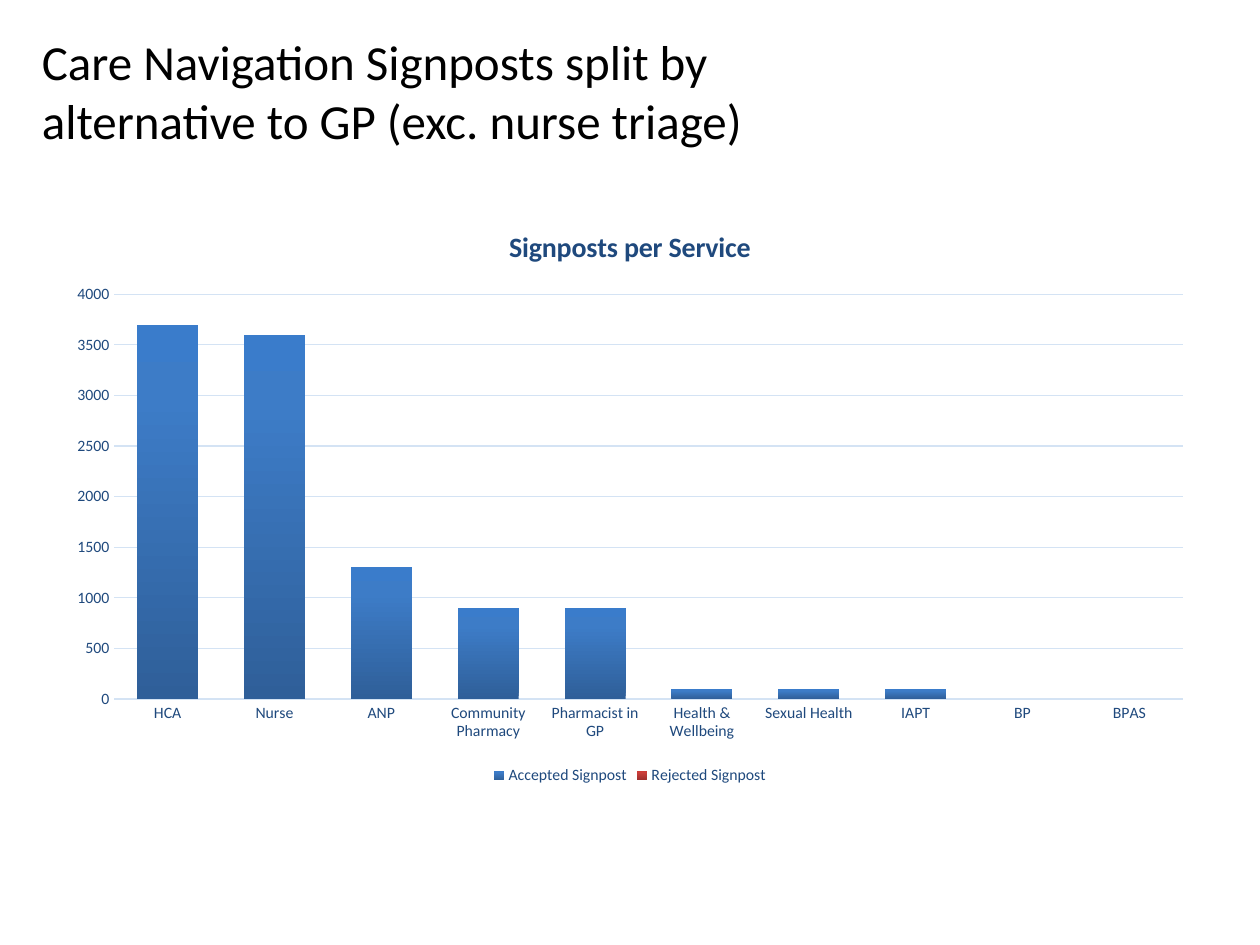
import lxml.etree
import pptx
import pptx.chart.data
import pptx.dml.color
import pptx.enum.chart
import pptx.enum.text
import pptx.oxml.ns
import pptx.util

Pt = pptx.util.Pt
RGBColor = pptx.dml.color.RGBColor
qn = pptx.oxml.ns.qn

BLACK = RGBColor(0x00, 0x00, 0x00)
NAVY = RGBColor(0x1F, 0x49, 0x7D)
PALE_BLUE = RGBColor(0xD4, 0xE3, 0xF4)
BLUES = [RGBColor(0x2F, 0x5F, 0x99), RGBColor(0x3D, 0x7C, 0xC7), RGBColor(0x3A, 0x7C, 0xCB)]
REDS = [RGBColor(0x9C, 0x2F, 0x2D), RGBColor(0xCB, 0x3E, 0x3A), RGBColor(0xCE, 0x3B, 0x37)]
STOPS = [0, 80, 100]


def style_font(font, size, color, bold=False):
    font.name = "Calibri"
    font.size = Pt(size)
    font.bold = bold
    font.color.rgb = color


def fill_upward(series, colors):
    """Three-stop gradient running from the foot of each column to its top."""
    gradient = series.format.fill
    gradient.gradient()
    gradient.gradient_angle = 90
    stop_list = next(series._element.iter(qn("a:gsLst")))
    for stop in list(stop_list):
        stop_list.remove(stop)
    for position, color in zip(STOPS, colors):
        stop = lxml.etree.SubElement(stop_list, qn("a:gs"), pos=str(position * 1000))
        lxml.etree.SubElement(stop, qn("a:srgbClr"), val=str(color))


presentation = pptx.Presentation()
presentation.slide_width = Pt(720)
presentation.slide_height = Pt(540)
slide = presentation.slides.add_slide(presentation.slide_layouts[6])

# Heading
heading = slide.shapes.add_textbox(Pt(24), Pt(18), Pt(443), Pt(84)).text_frame
heading.word_wrap = True
heading.margin_left = heading.margin_right = 0
heading.margin_top = heading.margin_bottom = 0
heading.vertical_anchor = pptx.enum.text.MSO_ANCHOR.TOP
heading.text = "Care Navigation Signposts split by alternative to GP (exc. nurse triage)"
style_font(heading.paragraphs[0].runs[0].font, 28, BLACK)

# Signposts per service, to the nearest hundred
signposts = pptx.chart.data.CategoryChartData()
signposts.categories = [
    "HCA", "Nurse", "ANP", "Community Pharmacy", "Pharmacist in GP",
    "Health & Wellbeing", "Sexual Health", "IAPT", "BP", "BPAS",
]
signposts.add_series("Accepted Signpost", [3700, 3600, 1300, 900, 900, 100, 100, 100, 0, 0])
signposts.add_series("Rejected Signpost", [0, 0, 0, 0, 0, None, None, 0, None, None])
chart = slide.shapes.add_chart(
    pptx.enum.chart.XL_CHART_TYPE.COLUMN_STACKED,
    Pt(31), Pt(116.6), Pt(658), Pt(334.8), signposts,
).chart
style_font(chart.font, 10, BLACK)

# Columns
columns = chart.plots[0]
columns.gap_width = 75
columns.overlap = 100
columns.vary_by_categories = False
for series, colors in zip(columns.series, [BLUES, REDS]):
    fill_upward(series, colors)

# Chart title and legend
chart.has_title = True
chart.chart_title.include_in_layout = False
chart_title = chart.chart_title.text_frame
chart_title.text = "Signposts per Service"
style_font(chart_title.paragraphs[0].runs[0].font, 16, NAVY, bold=True)
chart.has_legend = True
chart.legend.position = pptx.enum.chart.XL_LEGEND_POSITION.BOTTOM
chart.legend.include_in_layout = False
style_font(chart.legend.font, 9, NAVY)

# Axes
services, counts = chart.category_axis, chart.value_axis
for axis in (services, counts):
    axis.major_tick_mark = axis.minor_tick_mark = pptx.enum.chart.XL_TICK_MARK.NONE
    style_font(axis.tick_labels.font, 9, NAVY)
counts.minimum_scale = 0
counts.maximum_scale = 4000
counts.major_unit = 500
counts.has_major_gridlines = True
counts.format.line.fill.background()
for line in (services.format.line, counts.major_gridlines.format.line):
    line.color.rgb = PALE_BLUE
    line.width = Pt(0.75)

presentation.save("out.pptx")
